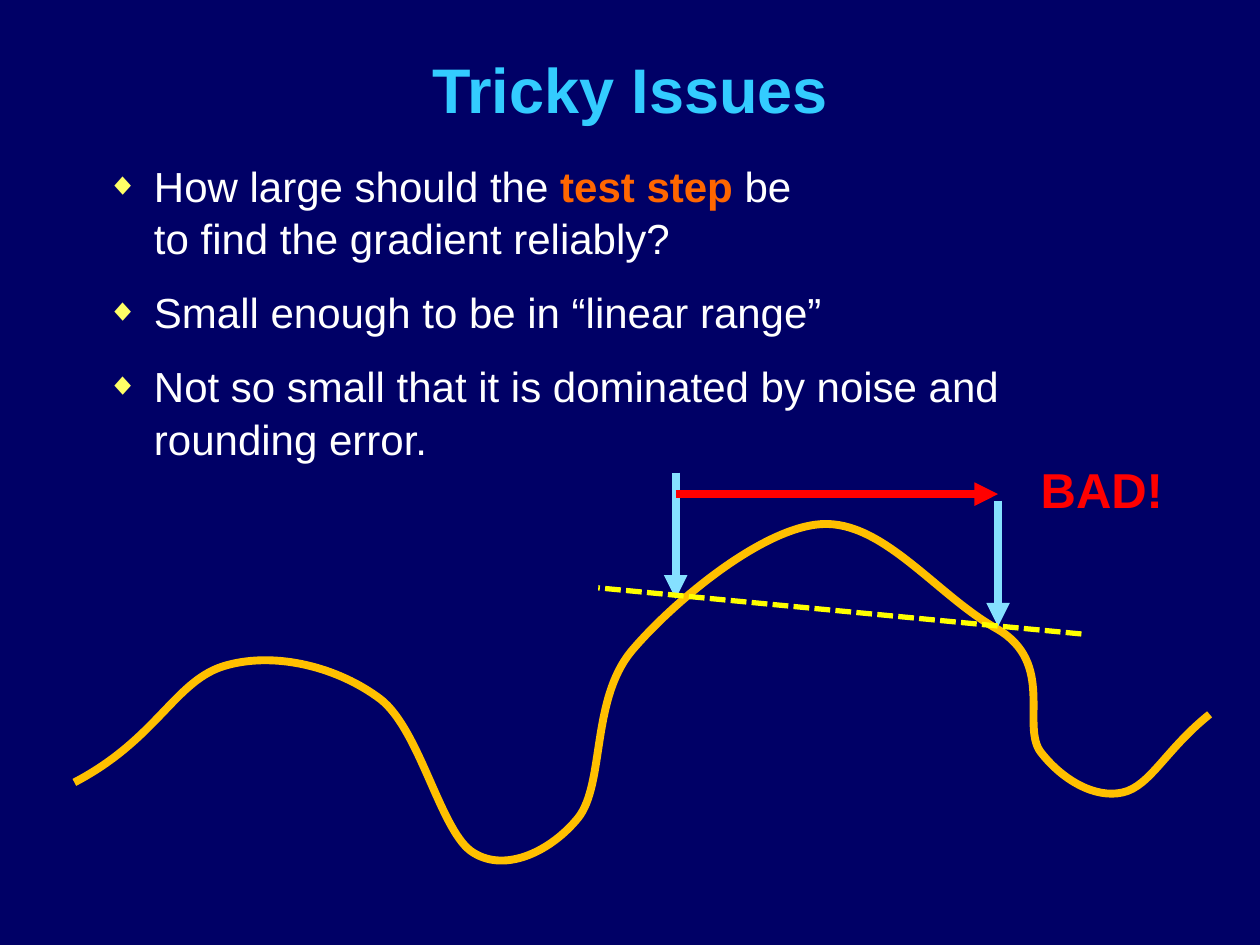
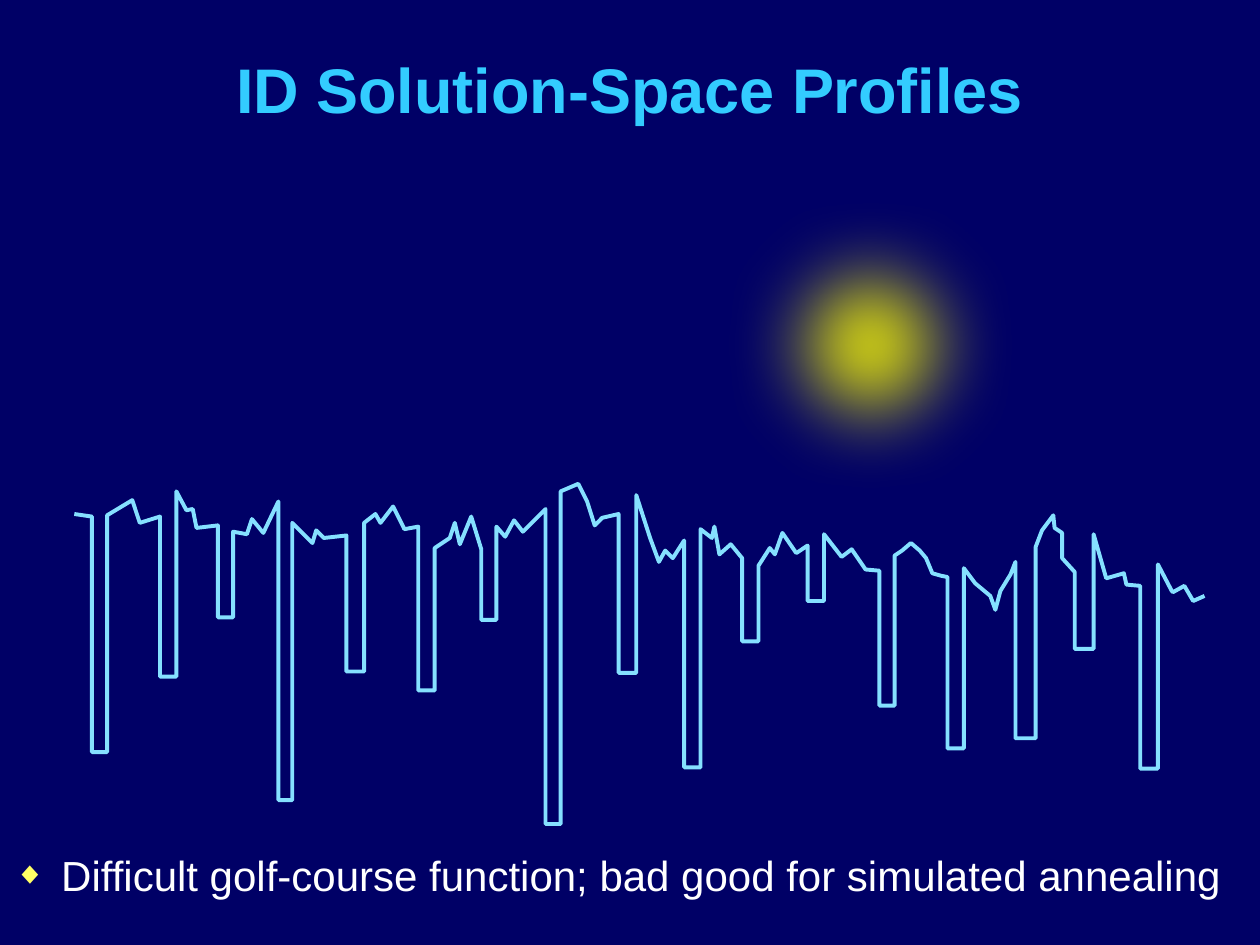
from lxml import etree
from pptx import Presentation
from pptx import util as u
from pptx.dml.color import RGBColor
from pptx.enum import dml, shapes, text
from pptx.oxml import ns

# Shared style
FONT = "Arial"
NAVY, SKY, WHITE = "000066", "33CCFF", "FFFFFF"
ORANGE, RED, GOLD, YELLOW = "FF6600", "FF0000", "FFC000", "FFFF00"
ICE, PINK, BULLET = "85E0FF", "FF9999", "FFFF66"
INDENT = u.Cm(0.95)
GRID = u.Cm(2.54) / 100  # outline points are given in hundredths of an inch

# Gradient curve: a start point, then two handles and an end point per piece
CURVE_POINTS = [
    (59, 621),
    (126, 586), (139, 539), (180, 528),
    (220, 517), (269, 530), (302, 555),
    (334, 580), (350, 662), (376, 677),
    (402, 693), (438, 675), (459, 649),
    (480, 622), (469, 556), (501, 517),
    (533, 479), (604, 419), (652, 416),
    (701, 413), (744, 473), (791, 499),
    (838, 526), (810, 576), (826, 597),
    (843, 619), (869, 634), (891, 629),
    (913, 624), (925, 595), (960, 567),
]

# Golf course: stretches of rough ground, each followed by the floor of a hole
COURSE = [
    ([(59, 408), (73, 410)], 597),
    ([(85, 409), (105, 397), (111, 415), (127, 410)], 537),
    ([(140, 390), (148, 405), (153, 404), (156, 419), (173, 417)], 490),
    ([(185, 422), (196, 424), (200, 412), (209, 423), (221, 398)], 635),
    ([(232, 415), (248, 431), (251, 421), (257, 427), (275, 425)], 533),
    ([(289, 415), (298, 408), (302, 415), (312, 402), (321, 420),
      (332, 418)], 548),
    ([(345, 435), (357, 427), (361, 415), (365, 432), (374, 410),
      (382, 436)], 492),
    ([(394, 418), (401, 426), (408, 413), (415, 422), (433, 404)], 654),
    ([(445, 390), (459, 384), (466, 398), (472, 417), (478, 411),
      (491, 408)], 534),
    ([(505, 393), (516, 427), (523, 446), (528, 437), (534, 443),
      (543, 429)], 609),
    ([(556, 420), (565, 427), (567, 418), (571, 440), (580, 432),
      (589, 443)], 509),
    ([(602, 449), (611, 435), (615, 440), (621, 423), (632, 439),
      (641, 433)], 477),
    ([(654, 424), (668, 442), (676, 436), (687, 452), (698, 453)], 560),
    ([(710, 441), (716, 437), (723, 431), (730, 437), (735, 443),
      (740, 455), (747, 457), (752, 458)], 594),
    ([(765, 451), (774, 463), (786, 473), (790, 484), (794, 469),
      (802, 456), (806, 446)], 586),
    ([(822, 434), (827, 421), (836, 409), (837, 419), (843, 423),
      (843, 443), (853, 454)], 515),
    ([(868, 424), (878, 459), (892, 455), (894, 464), (905, 465)], 610),
    ([(919, 448), (930, 469), (931, 470), (940, 465), (947, 477),
      (956, 473)], None),
]


def rgb(value):
    return RGBColor.from_string(value)


def course_points():
    """Join the stretches of ground with straight-sided holes."""
    points = []
    floor = None
    for ground, next_floor in COURSE:
        if floor is not None:
            points += [(points[-1][0], floor), (ground[0][0], floor)]
        points += ground
        floor = next_floor
    return points


class Deck:
    def __init__(self):
        self.presentation = Presentation()
        self.presentation.slide_width = u.Cm(25.4)
        self.presentation.slide_height = u.Cm(19.05)
        background = self.presentation.slide_master.background.fill
        background.solid()
        background.fore_color.rgb = rgb(NAVY)
        self.slide = None

    def new_slide(self, title):
        layout = self.presentation.slide_layouts[1]
        self.slide = self.presentation.slides.add_slide(layout)
        shape = self.slide.shapes.title
        self.place(shape, 1.9, 0.84, 21.6, 1.9)
        shape.text_frame.auto_size = text.MSO_AUTO_SIZE.NONE
        shape.text_frame.vertical_anchor = text.MSO_ANCHOR.MIDDLE
        paragraph = shape.text_frame.paragraphs[0]
        paragraph.alignment = text.PP_ALIGN.CENTER
        self.run(paragraph, title, 36, SKY, bold=True)

    @staticmethod
    def place(shape, left, top, width, height):
        shape.left, shape.top = u.Cm(left), u.Cm(top)
        shape.width, shape.height = u.Cm(width), u.Cm(height)

    @staticmethod
    def run(paragraph, words, size, color, bold=False):
        run = paragraph.add_run()
        run.text = words
        run.font.name = FONT
        run.font.size = u.Pt(size)
        run.font.bold = bold
        run.font.color.rgb = rgb(color)

    @staticmethod
    def child(parent, tag, **attributes):
        return etree.SubElement(parent, ns.qn(tag), attributes)

    def bullet(self, paragraph):
        properties = paragraph._p.get_or_add_pPr()
        properties.set("marL", str(INDENT))
        properties.set("indent", str(-INDENT))
        color = self.child(properties, "a:buClr")
        self.child(color, "a:srgbClr", val=BULLET)
        self.child(properties, "a:buSzPct", val="75000")
        self.child(properties, "a:buChar", char="◆")

    def bullets(self, items, box):
        """Each item is a list of (words, color, bold) runs; None breaks a line."""
        shape = self.slide.placeholders[1]
        self.place(shape, *box)
        frame = shape.text_frame
        frame.auto_size = text.MSO_AUTO_SIZE.NONE
        for index, runs in enumerate(items):
            paragraph = frame.add_paragraph() if index else frame.paragraphs[0]
            self.bullet(paragraph)
            paragraph.space_before = u.Pt(12 if index else 0)
            paragraph.line_spacing = 1.05
            for part in runs:
                if part is None:
                    paragraph.add_line_break()
                else:
                    words, color, bold = part
                    self.run(paragraph, words, 24, color, bold)

    def label(self, words, color, box):
        shape = self.slide.shapes.add_textbox(*map(u.Cm, box))
        shape.text_frame.word_wrap = False
        shape.text_frame.auto_size = text.MSO_AUTO_SIZE.SHAPE_TO_FIT_TEXT
        self.run(shape.text_frame.paragraphs[0], words, 28, color, bold=True)

    def outline(self, points, color, width, curved=False):
        builder = self.slide.shapes.build_freeform(*points[0], scale=GRID)
        builder.add_line_segments(points[1:], close=False)
        shape = builder.convert_to_shape()
        shape.shadow.inherit = False
        shape.fill.background()
        shape.line.color.rgb = rgb(color)
        shape.line.width = u.Pt(width)
        if curved:
            self.curve(shape)

    def curve(self, shape):
        """Turn every three straight steps into one Bezier piece."""
        path = next(shape._element.iter(ns.qn("a:path")))
        steps = path.findall(ns.qn("a:lnTo"))
        for start in range(0, len(steps), 3):
            piece = self.child(path, "a:cubicBezTo")
            for step in steps[start:start + 3]:
                piece.append(step[0])
                path.remove(step)

    def line(self, start, end, color, width=4.5, arrow=True, dash=None):
        shape = self.slide.shapes.add_connector(
            shapes.MSO_CONNECTOR.STRAIGHT, *map(u.Cm, start + end))
        shape.line.color.rgb = rgb(color)
        shape.line.width = u.Pt(width)
        if dash:
            shape.line.dash_style = dash
        if arrow:
            self.child(shape.line._get_or_add_ln(), "a:tailEnd", type="triangle")
        self.child(shape._element.spPr, "a:effectLst")

    def glow(self, left, top, size, fill, edge, width, softness):
        shape = self.slide.shapes.add_shape(
            shapes.MSO_SHAPE.OVAL, *map(u.Cm, (left, top, size, size)))
        shape.shadow.inherit = False
        shape.fill.solid()
        shape.fill.fore_color.rgb = rgb(fill)
        shape.line.color.rgb = rgb(edge)
        shape.line.width = u.Pt(width)
        effects = shape._element.spPr.find(ns.qn("a:effectLst"))
        self.child(effects, "a:softEdge", rad=str(u.Pt(softness)))


def tricky_issues(deck):
    deck.new_slide("Tricky Issues")
    deck.bullets([
        [("How large should the ", WHITE, False), ("test step ", ORANGE, True),
         ("be ", WHITE, False), None,
         ("to find the gradient reliably?", WHITE, False)],
        [("Small enough to be in “linear range”", WHITE, False)],
        [("Not so small that it is dominated by noise and rounding error.",
          WHITE, False)],
    ], (1.9, 3.05, 21.8, 6.5))

    # Curve, with the two sample points and the step between them
    deck.outline(CURVE_POINTS, GOLD, 6 * 0.75, curved=True)
    first, second = 13.62, 20.12
    for x, top in ((first, 9.53), (second, 10.09)):
        deck.line((x, top), (x, top + 2.54), ICE)
    deck.line((first, 9.96), (second, 9.96), RED)

    # Misleading gradient
    deck.line((21.8, 12.78), (12.06, 11.85), YELLOW, width=3, arrow=False,
              dash=dml.MSO_LINE.SQUARE_DOT)
    deck.label("BAD!", RED, (20.73, 9.14, 3.02, 1.45))


def solution_profiles(deck):
    deck.new_slide("ID Solution-Space Profiles")
    deck.bullets([
        [("Difficult golf-course function; bad good for simulated annealing",
          WHITE, False)],
    ], (0.03, 16.94, 25.37, 1.68))

    # Glowing discs above the course
    deck.glow(14.05, 3.45, 6.99, YELLOW, YELLOW, 6, softness=50)
    deck.glow(21.39, 7.42, 3.38, PINK, WHITE, 1, softness=50)
    deck.glow(19.48, 10.24, 0.71, ICE, ICE, 1, softness=10)
    deck.outline(course_points(), ICE, 2.25)


def main():
    deck = Deck()
    tricky_issues(deck)
    solution_profiles(deck)
    deck.presentation.save("out.pptx")


if __name__ == "__main__":
    main()
